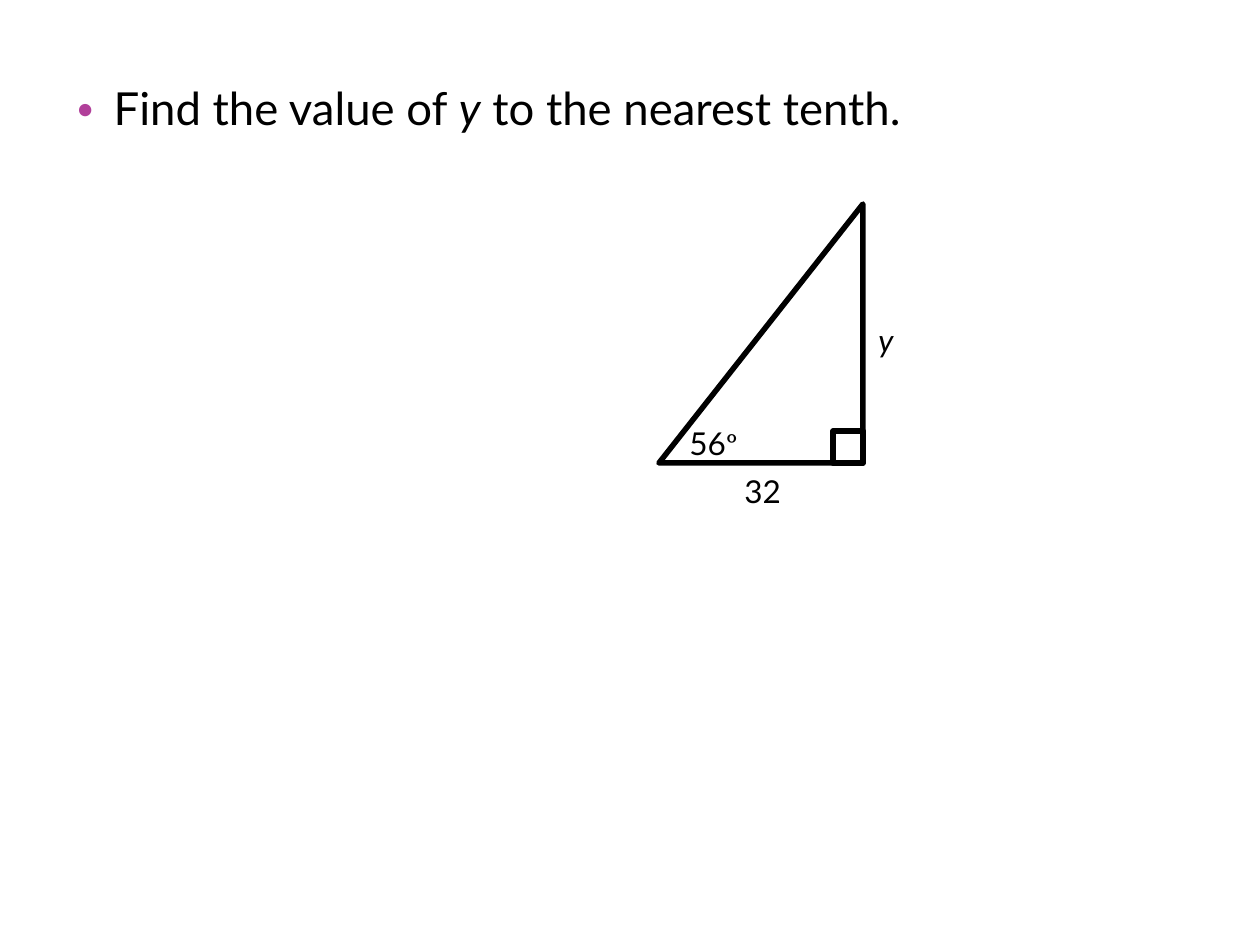
from lxml import etree
from pptx import Presentation
from pptx import util as u
from pptx.dml.color import RGBColor
from pptx.enum import shapes, text
from pptx.oxml import ns

PX = u.Inches(1) / 126
COLOURS = {"ink": "000000", "bullet": "B13F9A"}
FONT = "Lato"


def px(length):
    return u.Emu(round(length * PX))


def colour(name):
    return RGBColor.from_string(COLOURS[name])


def write_spans(para, spans, size):
    """Add (wording, font name, italic) spans to a paragraph."""
    for wording, font_name, italic in spans:
        span = para.add_run()
        span.text = wording
        span.font.name = font_name
        span.font.size = u.Pt(size)
        span.font.italic = italic
        span.font.color.rgb = colour("ink")


def add_bullet(para, indent):
    properties = para._p.get_or_add_pPr()
    properties.set("marL", str(px(indent)))
    properties.set("indent", str(-px(indent)))
    bullet_colour = etree.SubElement(properties, ns.qn("a:buClr"))
    etree.SubElement(bullet_colour, ns.qn("a:srgbClr"), val=COLOURS["bullet"])
    etree.SubElement(properties, ns.qn("a:buSzPct"), val="73000")
    etree.SubElement(properties, ns.qn("a:buFont"), typeface=FONT)
    etree.SubElement(properties, ns.qn("a:buChar"), char="•")


def fill_question(body):
    body.left, body.top, body.width, body.height = map(px, (63, 74, 998, 815))
    frame = body.text_frame
    frame.auto_size = text.MSO_AUTO_SIZE.NONE
    frame.vertical_anchor = text.MSO_ANCHOR.TOP
    para = frame.paragraphs[0]
    add_bullet(para, 38)
    para.space_before = u.Pt(0)
    write_spans(para, [("Find the value of ", FONT, False), ("y", FONT, True),
                       (" to the nearest tenth.", FONT, False)], 26)


def add_outline(page, kind, left, top, width, height):
    shape = page.shapes.add_shape(kind, *map(px, (left, top, width, height)))
    shape.shadow.inherit = False
    shape.fill.background()
    shape.line.color.rgb = colour("ink")
    shape.line.width = u.Pt(3.15)
    return shape


def add_triangle(page, left, top, width, height, corner_width, corner_height):
    """Draw a right triangle with its marked right angle at the lower right."""
    triangle = add_outline(page, shapes.MSO_SHAPE.RIGHT_TRIANGLE, left, top, width, height)
    triangle._element.spPr.xfrm.set("flipH", "1")
    add_outline(page, shapes.MSO_SHAPE.RECTANGLE, left + width - corner_width,
                top + height - corner_height, corner_width, corner_height)


def add_label(page, left, top, spans):
    box = page.shapes.add_textbox(*map(px, (left, top, 117, 50)))
    box.text_frame.word_wrap = True
    box.text_frame.auto_size = text.MSO_AUTO_SIZE.SHAPE_TO_FIT_TEXT
    write_spans(box.text_frame.paragraphs[0], spans, 18)


def main():
    deck = Presentation()
    deck.slide_width, deck.slide_height = px(1260), px(945)
    page = deck.slides.add_slide(deck.slide_layouts[1])
    title = page.shapes.title._element
    title.getparent().remove(title)

    fill_question(page.placeholders[1])
    add_triangle(page, 659, 204, 204, 259, 30, 32)
    add_label(page, 677, 418, [("56", FONT, False), ("°", "Cambria", False)])
    add_label(page, 732, 466, [("32", FONT, False)])
    add_label(page, 866, 315, [("y", FONT, True)])
    deck.save("out.pptx")


if __name__ == "__main__":
    main()
